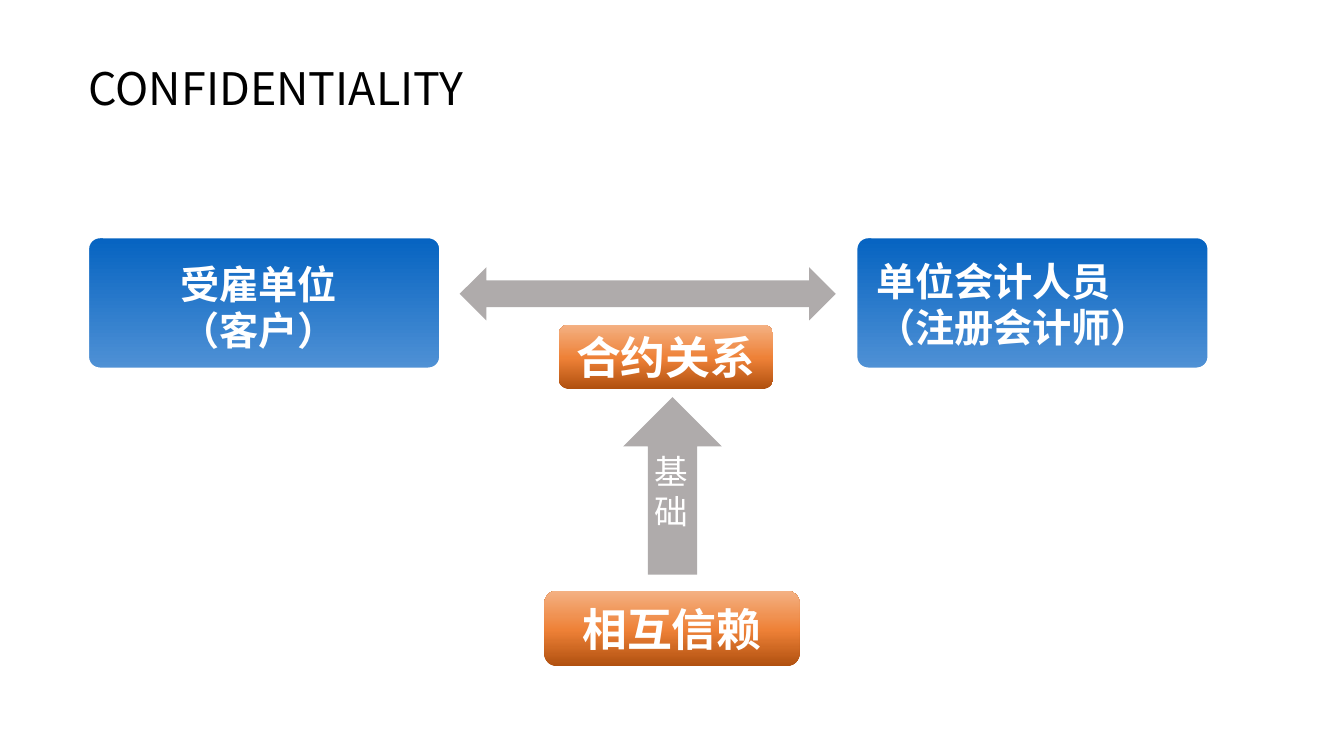
from copy import deepcopy
from dataclasses import dataclass
from typing import Optional

from pptx import Presentation
from pptx.dml.color import RGBColor
from pptx.enum.shapes import MSO_SHAPE as Preset
from pptx.enum.text import MSO_ANCHOR as Anchor, PP_ALIGN as Align
from pptx.oxml.ns import qn
from pptx.util import Inches, Pt


@dataclass(frozen=True)
class Theme:
    font: str = "Noto Sans CJK SC"
    ink: str = "000000"
    white: str = "FFFFFF"
    arrow: str = "AFABAB"
    party: tuple = ((0, "0563C1"), (1, "4F91D5"))
    bond: tuple = ((0, "B0500F"), (0.48, "EE8137"), (1, "F4B183"))
    heading: int = 32
    party_size: int = 28
    basis_size: int = 24


@dataclass(frozen=True)
class Box:
    left: float
    top: float
    width: float
    height: float

    def lengths(self) -> tuple:
        return tuple(map(Inches, (self.left, self.top, self.width, self.height)))


@dataclass(frozen=True)
class Label:
    box: Box
    lines: tuple
    size: int
    color: str
    bold: bool = False
    spacing: object = None
    top_inset: float = 0.05


@dataclass(frozen=True)
class Panel:
    box: Box
    stops: tuple
    angle: int
    corner: float = 0.167
    outline: Optional[str] = None
    caption: str = ""


THEME = Theme()


def write_lines(frame, lines: tuple, size: int, color: str, bold: bool,
                spacing=None, align=Align.LEFT) -> None:
    frame.word_wrap = True
    for index, line in enumerate(lines):
        paragraph = frame.paragraphs[0] if index == 0 else frame.add_paragraph()
        paragraph.text = line
        paragraph.alignment = align
        paragraph.line_spacing = spacing
        font = paragraph.font
        font.name, font.size, font.bold = THEME.font, Pt(size), bold
        font.color.rgb = RGBColor.from_string(color)


def add_label(slide, label: Label) -> None:
    frame = slide.shapes.add_textbox(*label.box.lengths()).text_frame
    frame.margin_top = Inches(label.top_inset)
    write_lines(frame, label.lines, label.size, label.color, label.bold, label.spacing)


def fill_gradient(shape, stops: tuple, angle: int) -> None:
    """Fill with any number of stops; the angle runs counter-clockwise."""
    fill = shape.fill
    fill.gradient()
    fill.gradient_angle = angle
    stop_list = next(shape._element.spPr.iter(qn("a:gsLst")))
    for _ in stops[2:]:
        stop_list.append(deepcopy(stop_list[0]))
    for stop, (position, color) in zip(fill.gradient_stops, stops):
        stop.position = position
        stop.color.rgb = RGBColor.from_string(color)


def add_panel(slide, panel: Panel) -> None:
    shape = slide.shapes.add_shape(Preset.ROUNDED_RECTANGLE, *panel.box.lengths())
    shape.shadow.inherit = False
    shape.adjustments[0] = panel.corner
    fill_gradient(shape, panel.stops, panel.angle)
    if panel.outline:
        shape.line.color.rgb = RGBColor.from_string(panel.outline)
        shape.line.width = Pt(2)
    else:
        shape.line.fill.background()
    if panel.caption:
        shape.text_frame.vertical_anchor = Anchor.MIDDLE
        write_lines(shape.text_frame, (panel.caption,), THEME.heading, THEME.white,
                    True, align=Align.CENTER)


def add_arrow(slide, preset: Preset, box: Box) -> None:
    arrow = slide.shapes.add_shape(preset, *box.lengths())
    arrow.shadow.inherit = False
    arrow.fill.solid()
    arrow.fill.fore_color.rgb = RGBColor.from_string(THEME.arrow)
    arrow.line.fill.background()


def party_panel(left: float) -> Panel:
    return Panel(Box(left, 2.35, 3.5, 1.31), THEME.party, 270, 0.091, THEME.white)


def party_label(box: Box, *lines: str) -> Label:
    return Label(box, lines, THEME.party_size, THEME.white, True, Pt(33), 0.1)


def bond_panel(box: Box, caption: str) -> Panel:
    return Panel(box, THEME.bond, 90, caption=caption)


def main() -> None:
    deck = Presentation()
    deck.slide_width, deck.slide_height = Inches(13.33), Inches(7.5)
    slide = deck.slides.add_slide(deck.slide_layouts[6])

    add_label(slide, Label(Box(0.78, 0.61, 5.89, 1.18), ("CONFIDENTIALITY",),
                           THEME.heading, THEME.ink, spacing=0.9))

    add_panel(slide, party_panel(0.87))
    add_label(slide, party_label(Box(1.69, 2.49, 2.34, 1.04), "受雇单位（客户）"))
    add_panel(slide, party_panel(8.49))
    add_label(slide, party_label(Box(8.59, 2.46, 3.49, 1.04),
                                 "单位会计人员", "（注册会计师）"))

    add_arrow(slide, Preset.LEFT_RIGHT_ARROW, Box(4.56, 2.65, 3.73, 0.53))
    add_arrow(slide, Preset.UP_ARROW, Box(6.18, 3.94, 0.98, 1.76))

    add_panel(slide, bond_panel(Box(5.4, 5.86, 2.53, 0.75), "相互信赖"))
    add_label(slide, Label(Box(6.39, 4.4, 0.43, 0.91), ("基础",), THEME.basis_size,
                           THEME.white, spacing=Pt(28.5), top_inset=0.08))
    add_panel(slide, bond_panel(Box(5.54, 3.22, 2.13, 0.64), "合约关系"))

    deck.save("out.pptx")


if __name__ == "__main__":
    main()
